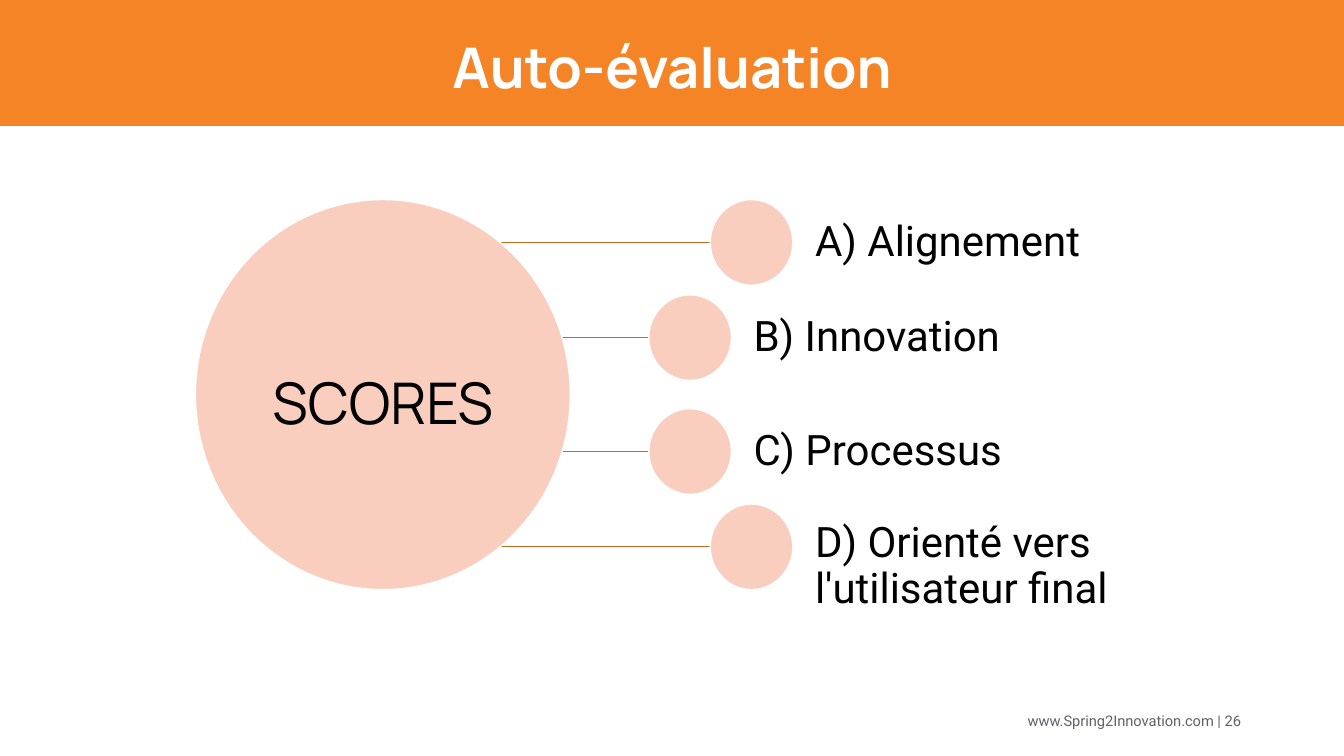
"""Build the self-assessment slide: a scores hub linked to four criteria."""
import pptx
import pptx.dml.color
import pptx.enum.shapes
import pptx.enum.text
import pptx.oxml
import pptx.util

ALIGN = pptx.enum.text.PP_ALIGN
ANCHOR = pptx.enum.text.MSO_ANCHOR
SHAPE = pptx.enum.shapes.MSO_SHAPE
RGB = pptx.dml.color.RGBColor.from_string

theme = {
    "band": RGB("F58426"), "bubble": RGB("FACEBE"), "link": RGB("C46A1E"),
    "white": RGB("FFFFFF"), "black": RGB("000000"), "grey": RGB("626266"),
    "heading": "Manrope", "body": "Roboto",
    "title_size": 40, "hub_size": 41, "label_size": 30, "footer_size": 10.5,
}

deck = pptx.Presentation()
deck.slide_width = pptx.util.Inches(13.34)
deck.slide_height = pptx.util.Inches(7.5)
column = deck.slide_width / 100
row = deck.slide_height / 100
page = deck.slides.add_slide(deck.slide_layouts[5])


def add_shape(kind, left, top, width, height, fill, outline=None):
    """Add a flat filled shape placed on the percent grid."""
    shape = page.shapes.add_shape(
        kind, int(left * column), int(top * row), int(width * column), int(height * row))
    shape.shadow.inherit = False
    shape.fill.solid()
    shape.fill.fore_color.rgb = fill
    if outline is None:
        shape.line.fill.background()
    else:
        shape.line.color.rgb = outline
        shape.line.width = pptx.util.Pt(1)
    return shape


def write(box, place, text, family, size, color, anchor, margins, align=ALIGN.LEFT,
          spacing=1.0, bold=False):
    """Place a box on the percent grid and fill it with one formatted paragraph."""
    left, top, width, height = place
    side, edge = (pptx.util.Inches(margin) for margin in margins)
    frame = box.text_frame
    para = frame.paragraphs[0]
    span = para.add_run()
    formats = (
        (box, {"left": int(left * column), "top": int(top * row),
               "width": int(width * column), "height": int(height * row)}),
        (frame, {"word_wrap": True, "auto_size": pptx.enum.text.MSO_AUTO_SIZE.NONE,
                 "vertical_anchor": anchor, "margin_left": side, "margin_right": side,
                 "margin_top": edge, "margin_bottom": edge}),
        (para, {"alignment": align, "line_spacing": spacing}),
        (span, {"text": text}),
        (span.font, {"name": family, "size": pptx.util.Pt(size), "bold": bold}),
        (span.font.color, {"rgb": color}),
    )
    for target, values in formats:
        for name, value in values.items():
            setattr(target, name, value)


band_height = 16.67
band = add_shape(SHAPE.RECTANGLE, 0, 0, 100, band_height, theme["band"])
title = page.shapes.title
title.element.addprevious(band.element)
write(title, (0, 0, 100, band_height), "Auto-évaluation", theme["heading"],
      theme["title_size"], theme["white"], ANCHOR.MIDDLE, (0.1, 0.05), ALIGN.CENTER, 1.1, True)

write(page.shapes.add_textbox(0, 0, 0, 0), (70.6, 92.67, 22.5, 5.33),
      "www.Spring2Innovation.com | 26", theme["body"], theme["footer_size"],
      theme["grey"], ANCHOR.MIDDLE, (0.1, 0.05), ALIGN.RIGHT)

hub_x, hub_y, hub_width, hub_height = 28.49, 52.2, 27.89, 51.6
dot_width, dot_height = 6.15, 11.33
outer_x, inner_x = 55.92, 51.35
outer_rise, inner_rise = 20.13, 7.53
criteria = [
    ("A) Alignement", outer_x, -outer_rise, 26.46, 0),
    ("B) Innovation", inner_x, -inner_rise, 22.79, 0),
    ("C) Processus", inner_x, inner_rise, 24.44, 0),
    ("D) Orienté vers l'utilisateur final", outer_x, outer_rise, 34.11, 2.67),
]

for _, dot_x, rise, _, _ in reversed(criteria):
    level = int((hub_y + rise) * row)
    link = page.shapes.add_connector(
        pptx.enum.shapes.MSO_CONNECTOR.STRAIGHT,
        int(hub_x * column), level, int(dot_x * column), level)
    link.line.color.rgb = theme["link"]
    link.line.width = pptx.util.Pt(1)
    link.element.spPr.append(pptx.oxml.parse_xml(
        '<a:effectLst xmlns:a="http://schemas.openxmlformats.org/drawingml/2006/main"/>'))

add_shape(SHAPE.OVAL, hub_x - hub_width / 2, hub_y - hub_height / 2,
          hub_width, hub_height, theme["bubble"], theme["white"])
write(page.shapes.add_textbox(0, 0, 0, 0), (19.57, 48.53, 17.84, 9.2), "SCORES",
      theme["heading"], theme["hub_size"], theme["black"], ANCHOR.BOTTOM, (0, 0),
      ALIGN.CENTER, 0.9)

for text, dot_x, rise, label_width, drop in criteria:
    top = hub_y + rise - dot_height / 2
    add_shape(SHAPE.OVAL, dot_x - dot_width / 2, top, dot_width, dot_height,
              theme["bubble"], theme["white"])
    write(page.shapes.add_textbox(0, 0, 0, 0),
          (dot_x + dot_width / 2, top + drop, label_width, dot_height), text,
          theme["body"], theme["label_size"], theme["black"], ANCHOR.MIDDLE, (0.22, 0),
          spacing=0.9)

deck.save("out.pptx")
